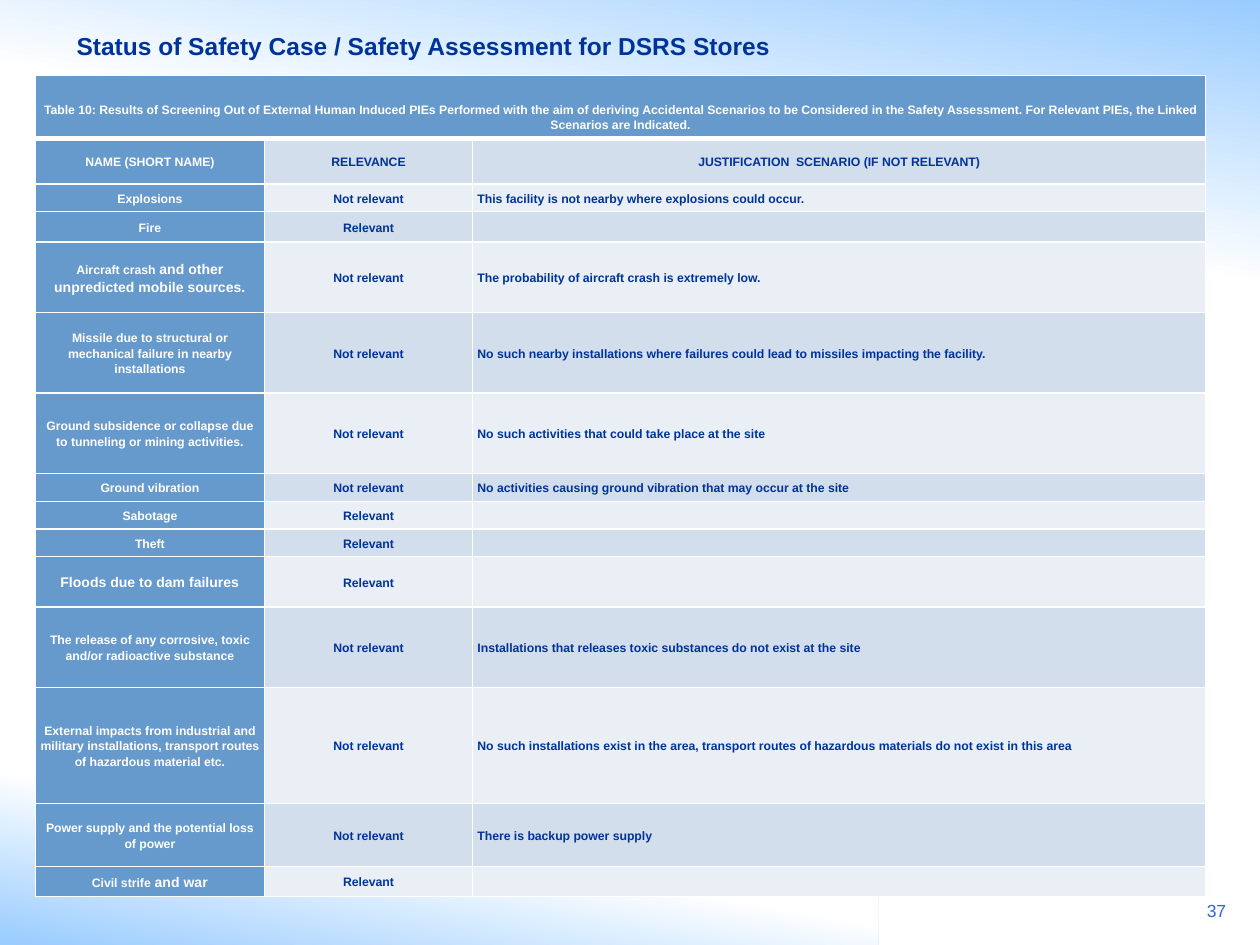
import pptx
import pptx.dml.color
import pptx.enum.shapes
import pptx.enum.text
import pptx.oxml
import pptx.oxml.ns
import pptx.util

Inches = pptx.util.Inches
Pt = pptx.util.Pt
RGBColor = pptx.dml.color.RGBColor
Align = pptx.enum.text.PP_ALIGN
Anchor = pptx.enum.text.MSO_ANCHOR

NAVY = RGBColor(0x00, 0x33, 0x99)
BLUE = RGBColor(0x33, 0x66, 0xCC)
SKY = RGBColor(0x99, 0xCC, 0xFF)
STEEL = RGBColor(0x66, 0x99, 0xCC)
BAND_DARK = RGBColor(0xD3, 0xDE, 0xEC)
BAND_LIGHT = RGBColor(0xEA, 0xEF, 0xF6)
WHITE = RGBColor(0xFF, 0xFF, 0xFF)

CAPTION = (
    "Table 10: Results of Screening Out of External Human Induced PIEs Performed "
    "with the aim of deriving Accidental Scenarios to be Considered in the Safety "
    "Assessment. For Relevant PIEs, the Linked Scenarios are Indicated."
)
HEADINGS = ("NAME (SHORT NAME)", "RELEVANCE", "JUSTIFICATION  SCENARIO (IF NOT RELEVANT)")
COLUMN_WIDTHS = (1.82, 1.65, 5.82)
CAPTION_HEIGHT = 0.5
HEADING_HEIGHT = 0.36
EVENTS = [
    (0.22, [("Explosions", 7)], "This facility is not nearby where explosions could occur."),
    (0.24, [("Fire", 7)], ""),
    (0.56, [("Aircraft crash", 7), (" and other unpredicted mobile sources.", 8)],
     "The probability of aircraft crash is extremely low."),
    (0.64, [("Missile due to structural or mechanical failure in nearby installations", 7)],
     "No such nearby installations where failures could lead to missiles impacting the facility."),
    (0.64, [("Ground subsidence or collapse due to tunneling or mining activities.", 7)],
     "No such activities that could take place at the site"),
    (0.22, [("Ground vibration", 7)],
     "No activities causing ground vibration that may occur at the site"),
    (0.22, [("Sabotage", 7)], ""),
    (0.22, [("Theft", 7)], ""),
    (0.4, [("Floods due to dam failures", 8)], ""),
    (0.64, [("The release of any corrosive, toxic and/or radioactive substance", 7)],
     "Installations that releases toxic substances do not exist at the site"),
    (0.92, [("External impacts from industrial and military installations, "
             "transport routes of hazardous material etc.", 7)],
     "No such installations exist in the area, transport routes of hazardous "
     "materials do not exist in this area"),
    (0.5, [("Power supply and the potential loss of power", 7)], "There is backup power supply"),
    (0.24, [("Civil strife", 7), (" and war", 8)], ""),
]


def apply_format(target, values):
    for name, value in values.items():
        setattr(target, name, value)


class SlideBuilder:
    font_name = "Arial"
    cell_format = {
        "margin_left": Inches(0.04), "margin_right": Inches(0.04),
        "margin_top": Inches(0.04), "margin_bottom": Inches(0.04),
        "vertical_anchor": Anchor.MIDDLE,
    }

    def __init__(self, presentation):
        self.slide = presentation.slides.add_slide(presentation.slide_layouts[6])

    def add_run(self, paragraph, text, size, color, bold):
        run = paragraph.add_run()
        run.text = text
        apply_format(run.font, {"name": self.font_name, "size": Pt(size), "bold": bold})
        run.font.color.rgb = color

    def add_gradient(self, left, top, width, height, angle, white_stop):
        shape = self.slide.shapes.add_shape(
            pptx.enum.shapes.MSO_SHAPE.RECTANGLE,
            Inches(left), Inches(top), Inches(width), Inches(height))
        shape.shadow.inherit = False
        shape.line.fill.background()
        shape.fill.gradient()
        shape.fill.gradient_angle = angle
        for stop, position, color in zip(shape.fill.gradient_stops, (0, white_stop), (SKY, WHITE)):
            stop.position = position
            stop.color.rgb = color

    def add_text(self, left, top, width, height, text, size, color, bold=False,
                 align=Align.LEFT, anchor=Anchor.TOP):
        shape = self.slide.shapes.add_textbox(
            Inches(left), Inches(top), Inches(width), Inches(height))
        apply_format(shape.text_frame, {"word_wrap": True, "vertical_anchor": anchor})
        paragraph = shape.text_frame.paragraphs[0]
        paragraph.alignment = align
        self.add_run(paragraph, text, size, color, bold)

    def add_table(self, left, top, row_heights, column_widths):
        frame = self.slide.shapes.add_table(
            len(row_heights), len(column_widths), Inches(left), Inches(top),
            Inches(sum(column_widths)), Inches(sum(row_heights)))
        table = frame.table
        apply_format(table, {"first_row": False, "horz_banding": False})
        for row, height in zip(table.rows, row_heights):
            row.height = Inches(height)
        for column, width in zip(table.columns, column_widths):
            column.width = Inches(width)
        return table

    def add_borders(self, cell, bottom_width, top_width):
        properties = cell._tc.get_or_add_tcPr()
        for side, width in (("L", 1), ("R", 1), ("T", top_width), ("B", bottom_width)):
            properties.append(pptx.oxml.parse_xml(
                f'<a:ln{side} {pptx.oxml.ns.nsdecls("a")} w="{Pt(width)}">'
                f'<a:solidFill><a:srgbClr val="{WHITE}"/></a:solidFill></a:ln{side}>'))

    def fill_cell(self, cell, runs, fill, color, align=Align.CENTER, space_after=0,
                  top_width=1, bottom_width=1, **overrides):
        apply_format(cell, {**self.cell_format, **overrides})
        self.add_borders(cell, bottom_width, top_width)
        cell.fill.solid()
        cell.fill.fore_color.rgb = fill
        paragraph = cell.text_frame.paragraphs[0]
        apply_format(paragraph, {
            "alignment": align, "line_spacing": 1.15, "space_after": Pt(space_after)})
        for text, size in runs:
            self.add_run(paragraph, text, size, color, True)
        if not runs:
            paragraph._p.append(pptx.oxml.parse_xml(
                f'<a:endParaRPr {pptx.oxml.ns.nsdecls("a")} sz="700"/>'))


def main():
    presentation = pptx.Presentation()
    apply_format(presentation, {"slide_width": Inches(10), "slide_height": Inches(7.5)})
    builder = SlideBuilder(presentation)
    builder.add_gradient(0, 5.8, 6.97, 1.7, 80, 0.48)
    builder.add_gradient(0, 0, 10, 2.33, 260, 0.56)
    builder.add_text(0.51, 0.13, 6.46, 0.47,
                     "Status of Safety Case / Safety Assessment for DSRS Stores",
                     14, NAVY, bold=True, anchor=Anchor.MIDDLE)
    builder.add_text(9.27, 7.09, 0.56, 0.32, "37", 10, BLUE, align=Align.RIGHT)

    row_heights = [CAPTION_HEIGHT, HEADING_HEIGHT] + [event[0] for event in EVENTS]
    table = builder.add_table(0.28, 0.6, row_heights, COLUMN_WIDTHS)
    table.cell(0, 0).merge(table.cell(0, 2))
    for column in range(3):
        builder.fill_cell(table.cell(0, column), [] if column else [(CAPTION, 7)],
                          STEEL, WHITE, bottom_width=3,
                          vertical_anchor=Anchor.BOTTOM, margin_bottom=Inches(0.05))
        builder.fill_cell(table.cell(1, column), [(HEADINGS[column], 7)],
                          BAND_DARK if column else STEEL, NAVY if column else WHITE,
                          space_after=10, top_width=3)
    for row, (_, name_runs, justification) in enumerate(EVENTS, start=2):
        band = BAND_DARK if row % 2 else BAND_LIGHT
        relevance = "Not relevant" if justification else "Relevant"
        builder.fill_cell(table.cell(row, 0), name_runs, STEEL, WHITE)
        builder.fill_cell(table.cell(row, 1), [(relevance, 7)], band, NAVY)
        builder.fill_cell(table.cell(row, 2), [(justification, 7)] if justification else [],
                          band, NAVY, align=Align.JUSTIFY)
    presentation.save("out.pptx")


if __name__ == "__main__":
    main()
